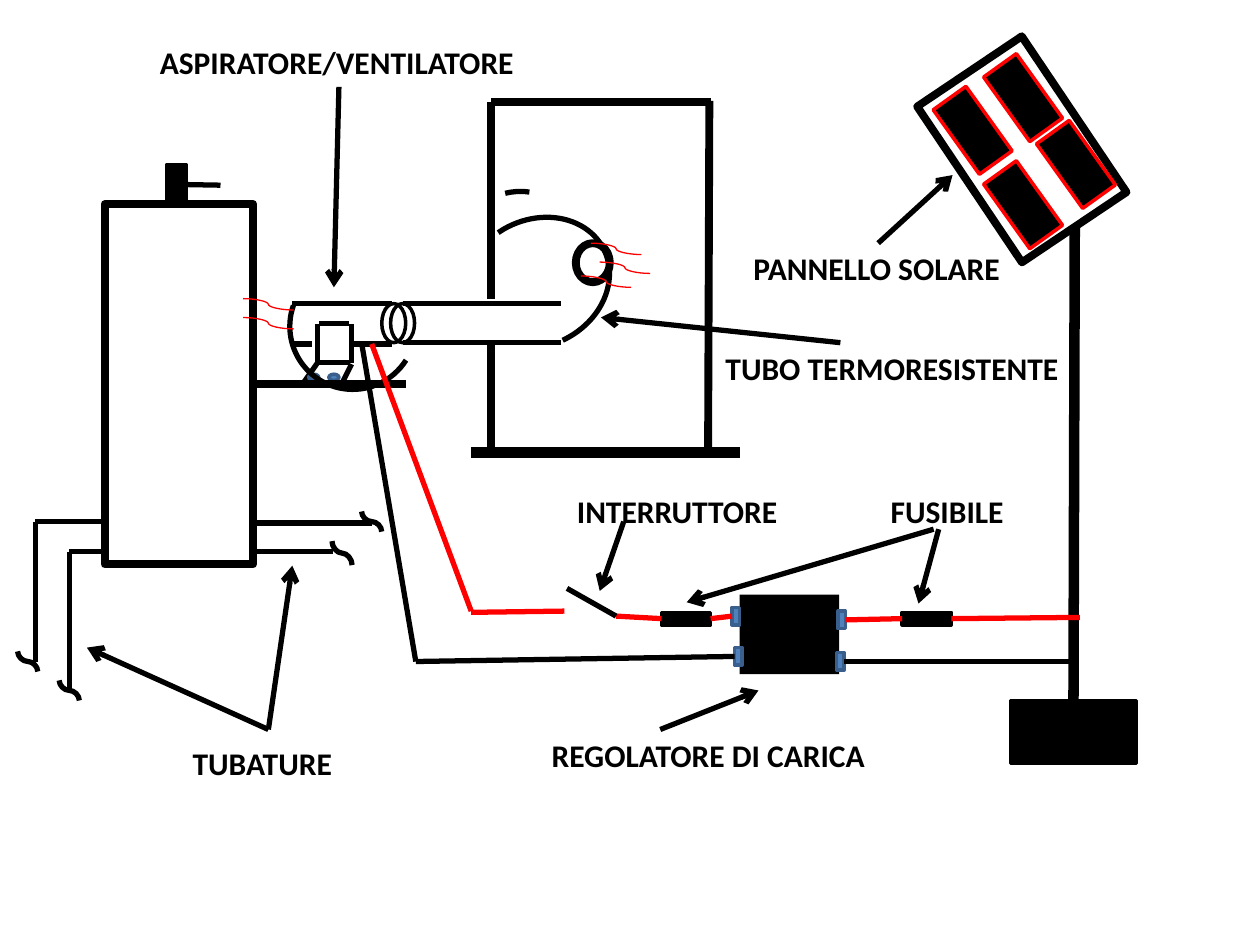
from lxml import etree
from pptx import Presentation
from pptx.dml.color import RGBColor
from pptx.enum.shapes import MSO_CONNECTOR, MSO_SHAPE
from pptx.enum.text import MSO_AUTO_SIZE
from pptx.oxml.ns import qn
from pptx.util import Inches, Pt

RECT, OVAL, ARC = MSO_SHAPE.RECTANGLE, MSO_SHAPE.OVAL, MSO_SHAPE.ARC
BOLT = MSO_SHAPE.FLOWCHART_CONNECTOR
STRAIGHT, CURVE = MSO_CONNECTOR.STRAIGHT, MSO_CONNECTOR.CURVE
TOP, LEFT, RIGHT = 0, 1, 3
BLACK, RED, BLUE, NAVY = "000000", "FF0000", "4F81BD", "3A5F8C"
COLUMNS, SLIDE_WIDTH, SLIDE_HEIGHT = 100, Inches(10), Inches(7.5)


def cells(n):
    """Convert grid cells, square and a hundredth of the slide wide, to EMU."""
    return round(n * SLIDE_WIDTH / COLUMNS)


def rgb(value):
    """Turn a hex string into a colour."""
    return RGBColor.from_string(value)


def shape(s, kind, x, y, w, h, fill=None, line=BLACK, width=2, rot=0, angles=()):
    """Draw a preset shape; angles in degrees set the ends of an arc."""
    sp = s.shapes.add_shape(kind, *map(cells, (x, y, w, h)))
    sp.shadow.inherit = False
    sp.rotation = rot
    for i, angle in enumerate(angles):
        sp.adjustments[i] = angle * 0.6
    if fill:
        sp.fill.solid()
        sp.fill.fore_color.rgb = rgb(fill)
    else:
        sp.fill.background()
    if line:
        sp.line.color.rgb = rgb(line)
        sp.line.width = Pt(width)
    else:
        sp.line.fill.background()
    return sp


def connect(s, x1, y1, x2, y2, color=BLACK, width=3, kind=STRAIGHT,
            start=None, end=None, arrow=False):
    """Draw a connector, joined to (shape, side) pairs where given."""
    c = s.shapes.add_connector(kind, *map(cells, (x1, y1, x2, y2)))
    if start:
        c.begin_connect(*start)
    if end:
        c.end_connect(*end)
    c.line.color.rgb = rgb(color)
    c.line.width = Pt(width)
    sp_pr = c._element.spPr
    if arrow:
        etree.SubElement(sp_pr.find(qn("a:ln")), qn("a:tailEnd"), type="arrow")
    etree.SubElement(sp_pr, qn("a:effectLst"))
    return c


def lines(s, segments, **style):
    """Draw several connectors in one style."""
    for segment in segments:
        connect(s, *segment, **style)


def pipe_end(s, x, y, w=1.6, h=1.6):
    """Draw the upright S-curve that breaks off a pipe."""
    c = connect(s, x + w, y, x, y + h, kind=CURVE)
    c._element.spPr.find(qn("a:xfrm")).set("rot", "16200000")


def hot_air(s, points):
    """Draw thin red waves starting at the given points."""
    for x, y in points:
        connect(s, x, y, x + 4, y + 0.9, RED, 0.75, CURVE)


def label(s, text, x, y, w):
    """Write a bold caption."""
    tf = s.shapes.add_textbox(*map(cells, (x, y, w, 4))).text_frame
    tf.word_wrap = False
    tf.auto_size = MSO_AUTO_SIZE.SHAPE_TO_FIT_TEXT
    p = tf.paragraphs[0]
    p.text = text
    p.font.name, p.font.size, p.font.bold = "Calibri", Pt(18), True
    p.font.color.rgb = rgb(BLACK)


def boiler(s):
    """Draw the boiler, its chimney and its pipes."""
    shape(s, RECT, 8.3, 16.2, 11.8, 28.6, width=4.5)
    chimney = shape(s, RECT, 13.2, 13.1, 1.6, 3.1, BLACK)
    connect(s, 14.8, 14.7, 17.5, 14.7, start=(chimney, RIGHT))
    lines(s, [(2.8, 41.4, 8.3, 41.4), (5.5, 43.8, 8.3, 43.8),
              (2.8, 41.4, 2.8, 52.5), (5.5, 43.8, 5.5, 54.8),
              (20.1, 41.5, 29.5, 41.5), (20.1, 43.8, 26.4, 43.8)])
    for end in [(1.4, 51.7), (4.7, 54), (26.2, 43.1, 1.9), (28.7, 40.6)]:
        pipe_end(s, *end)


def fan(s):
    """Draw the fan on its shelf."""
    lines(s, [(23.2, 24.1, 31.1, 24.1), (23.2, 27.3, 24.8, 27.3),
              (27.9, 27.3, 31.1, 27.3), (25.3, 25.7, 27.7, 25.7),
              (25.2, 25.7, 25.2, 28.9), (27.9, 25.7, 27.9, 28.8),
              (25.2, 28.8, 27.7, 28.8), (25.2, 28.8, 24, 30.5),
              (27.9, 28.9, 27.1, 30.5), (24, 30.5, 27.1, 30.5)])
    for x in (24.5, 26.1):
        shape(s, BOLT, x, 29.7, 0.8, 0.5, BLUE, NAVY)
    connect(s, 20.1, 30.5, 32.2, 30.5, width=4.5)
    shape(s, ARC, 23, 20.9, 10, 10, width=3, rot=199.4, angles=(192.99, 0))
    hot_air(s, [(19.3, 23.7), (19.3, 25.2)])


def chamber(s):
    """Draw the heated chamber and the tube that enters it."""
    lines(s, [(39, 8.1, 56.4, 8.1), (39, 8.1, 39, 23.7),
              (56.3, 8, 56.2, 35.9), (39, 27.2, 39, 35.9)], width=4.5)
    connect(s, 37.4, 35.9, 58.7, 35.9, width=6)
    shape(s, OVAL, 45.7, 19.3, 2.7, 3.1, width=4.5)
    for x in (30.3, 31):
        shape(s, OVAL, x, 24.1, 1.9, 3.1)
    lines(s, [(32, y, 44.5, y) for y in (24.1, 27.2)])
    shape(s, ARC, 37.6, 16.5, 10, 11.9, width=3, rot=63.3, angles=(169.2, 2.36))
    shape(s, ARC, 36.3, 15.2, 10, 10, width=3, rot=81.5, angles=(174.5, 196.68))
    hot_air(s, [(47.6, 20.8), (46.1, 21.9), (46.9, 19.3)])


def solar_panel(s):
    """Draw the tilted panel with four solar cells on its post."""
    shape(s, RECT, 76.1, 4.4, 10, 14.9, width=4.5, rot=326.1)
    for x, y in [(83.8, 9.9), (79.6, 4.6), (79.6, 13.1), (75.6, 7.2)]:
        shape(s, RECT, x, y, 3.2, 6.3, BLACK, RED, rot=324.4)
    base = shape(s, RECT, 80.2, 55.6, 10, 5, BLACK)
    connect(s, 85.3, 18, 85.2, 55.6, width=6, end=(base, TOP))


def circuit(s):
    """Draw the charge regulator, fuses, switch and wires."""
    shape(s, RECT, 58.7, 47.2, 7.9, 6.3, BLACK, None)
    fuse_in, fuse_out = [shape(s, RECT, x, 48.6, 3.9, 1, BLACK) for x in (71.6, 52.5)]
    plus_in, minus_in, minus_out, plus_out = [
        shape(s, RECT, x, y, 0.6, 1.4, BLUE, NAVY)
        for x, y in [(66.5, 48.5), (66.4, 51.8), (58.3, 51.4), (58.1, 48.2)]]
    connect(s, 85.7, 49, 75.5, 49, RED, end=(fuse_in, RIGHT))
    connect(s, 67.1, 49, 71.6, 49, RED, start=(plus_in, RIGHT), end=(fuse_in, LEFT))
    connect(s, 56.4, 49, 58.1, 49, RED, start=(fuse_out, RIGHT), end=(plus_out, LEFT))
    connect(s, 48.9, 48.9, 52.5, 49.1, RED, end=(fuse_out, LEFT))
    connect(s, 45, 46.7, 48.9, 48.9)
    lines(s, [(29.5, 27.3, 37.4, 48.5), (37.4, 48.6, 44.8, 48.5)], color=RED)
    connect(s, 28.7, 27.2, 33, 52.5)
    connect(s, 33, 52.5, 58.3, 52.1, end=(minus_out, LEFT))
    connect(s, 85.3, 52.5, 67, 52.5, end=(minus_in, RIGHT))


def captions(s):
    """Write the captions and point them at their parts."""
    for caption in [("ASPIRATORE/VENTILATORE", 11.7, 2.9, 30.3),
                    ("PANNELLO SOLARE", 58.8, 19.3, 21.8),
                    ("TUBO TERMORESISTENTE", 56.6, 27.2, 28.6),
                    ("INTERRUTTORE", 44.8, 38.6, 18.1),
                    ("FUSIBILE", 69.7, 38.6, 11.1),
                    ("REGOLATORE DI CARICA", 42.8, 57.9, 27.1),
                    ("TUBATURE", 14.3, 58.6, 13.2)]:
        label(s, *caption)
    lines(s, [(26.9, 6.9, 26.5, 22.8), (69.7, 19.3, 75.6, 13.9),
              (66.7, 27.2, 47.7, 25.2), (49.5, 41.4, 47.6, 46.9),
              (74.5, 42, 72.9, 47.9), (74.1, 42, 54.5, 47.8),
              (52.4, 57.9, 60.2, 54.8), (21.3, 57.9, 23.2, 44.9),
              (21.3, 57.9, 6.9, 51.4)], arrow=True)


def main():
    """Build and save the slide."""
    prs = Presentation()
    prs.slide_width, prs.slide_height = SLIDE_WIDTH, SLIDE_HEIGHT
    s = prs.slides.add_slide(prs.slide_layouts[6])
    for draw in (boiler, fan, chamber, solar_panel, circuit, captions):
        draw(s)
    prs.save("out.pptx")


if __name__ == "__main__":
    main()
